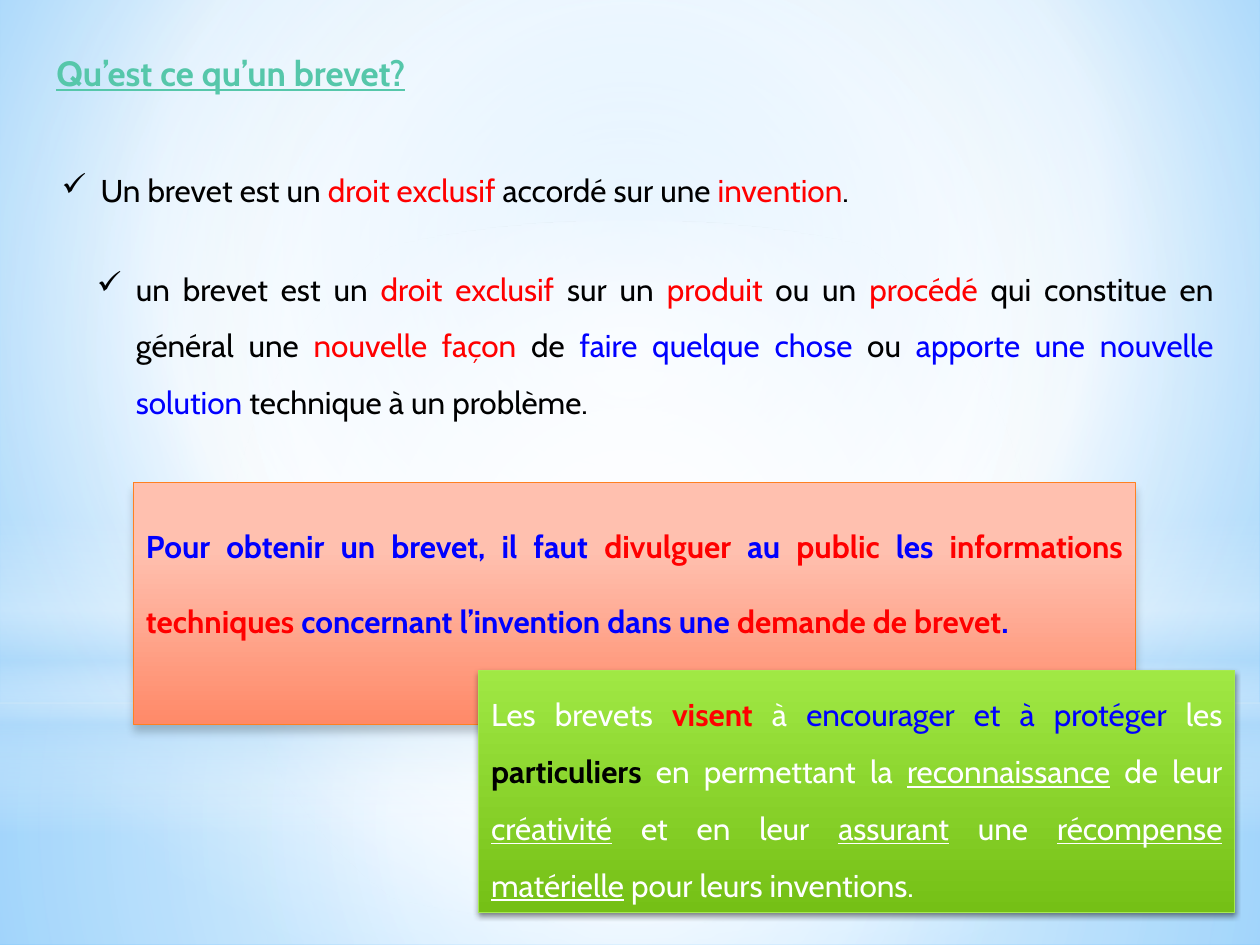
from lxml.etree import SubElement
from pptx import Presentation
from pptx.dml.color import RGBColor
from pptx.enum.shapes import MSO_SHAPE as SHAPE
from pptx.enum.text import MSO_ANCHOR as ANCHOR, MSO_AUTO_SIZE as AUTO, PP_ALIGN as ALIGN
from pptx.oxml.ns import qn
from pptx.util import Inches, Pt

FONT = "Cabin"
BLACK, WHITE, RED, BLUE, TEAL = "000000", "FFFFFF", "FF0000", "0000FF", "56C7AA"
SKY = "B4DCFA"
CENTRE = (50, 50, 50, 50)

# Content: runs are (text, colour, style), style holding b for bold, u for underline
TITLE = [("Qu’est ce qu’un brevet?", TEAL, "bu")]
RIGHT = [
    ("Un brevet est un ", BLACK, ""), ("droit exclusif ", RED, ""),
    ("accordé sur une ", BLACK, ""), ("invention", RED, ""), (".", BLACK, ""),
]
DEFINITION = [
    ("un brevet est un ", BLACK, ""), ("droit exclusif ", RED, ""),
    ("sur un ", BLACK, ""), ("produit", RED, ""), (" ou un ", BLACK, ""),
    ("procédé", RED, ""), (" qui constitue en général une ", BLACK, ""),
    ("nouvelle façon ", RED, ""), ("de ", BLACK, ""),
    ("faire quelque chose", BLUE, ""), (" ou ", BLACK, ""),
    ("apporte une nouvelle solution ", BLUE, ""),
    ("technique à un problème.", BLACK, ""),
]
CONDITION = [
    ("Pour obtenir un brevet, il faut ", BLUE, "b"), ("divulguer", RED, "b"),
    (" au ", BLUE, "b"), ("public", RED, "b"), (" les ", BLUE, "b"),
    ("informations techniques", RED, "b"),
    (" concernant l’invention dans une ", BLUE, "b"),
    ("demande de brevet", RED, "b"), (".", BLUE, "b"),
]
PURPOSE = [
    ("Les brevets ", WHITE, ""), ("visent", RED, "b"), (" à ", WHITE, ""),
    ("encourager et à protéger ", BLUE, ""), ("les ", WHITE, ""),
    ("particuliers ", BLACK, "b"), ("en permettant la ", WHITE, ""),
    ("reconnaissance", WHITE, "u"), (" de leur ", WHITE, ""),
    ("créativité", WHITE, "u"), (" et en leur ", WHITE, ""),
    ("assurant", WHITE, "u"), (" une ", WHITE, ""),
    ("récompense", WHITE, "u"), (" ", WHITE, ""),
    ("matérielle", WHITE, "u"), (" pour leurs inventions.", WHITE, ""),
]

# Backdrop layers: shape, place, stops (position, colour, opacity), gradient direction
LAYERS = [
    (SHAPE.RECTANGLE, (0, 5.58, 10, 1.92),
     [(0, WHITE, 91), (37, WHITE, 76), (100, SKY, 79)], {"focus": CENTRE}),
    (SHAPE.RECTANGLE, (0, 0, 10, 5.58),
     [(0, WHITE, 89), (48, WHITE, 62), (100, SKY, 79)], {"focus": CENTRE}),
    (SHAPE.RECTANGLE, (0, 4.12, 10, 2.5),
     [(0, WHITE, 0), (29, WHITE, 30), (45, SKY, 40), (55, WHITE, 26),
      (65, SKY, 60), (100, WHITE, 0)], {"angle": 90}),
    (SHAPE.OVAL, (0, 1.75, 10, 5.58),
     [(0, WHITE, 100), (56, WHITE, 0)], {"focus": CENTRE}),
]

# Text boxes: place, runs, format
TEXTS = [
    ((0.35, 0.36, 3.37, 0.44), TITLE, {"size": 20}),
    ((0.39, 1.31, 8.5, 0.4), RIGHT, {"bullet": "✓"}),
    ((0.67, 1.94, 9.06, 1.46), DEFINITION,
     {"bullet": "✓", "align": ALIGN.JUSTIFY, "spacing": 1.5}),
]

# Panels: place, stops, line colour, shadow (opacity, blur, distance), runs, spacing
PANELS = [
    ((1.06, 3.83, 7.95, 1.92), [(28, "FFC0AF", 100), (100, "FF8968", 100)],
     "FF8021", (20, 5, 4), CONDITION, 2.0),
    ((3.8, 5.32, 6, 1.92), [(0, "A0E844", 100), (100, "75C016", 100)],
     "A7EA52", (45, 3.1, 1.8), PURPOSE, 1.5),
]


def colour(text):
    return RGBColor.from_string(text)


def add_colour(parent, value, opacity):
    item = SubElement(parent, qn("a:srgbClr"), val=value)
    if opacity < 100:
        SubElement(item, qn("a:alpha"), val=str(opacity * 1000))


def set_gradient(fill, holder, stops, angle=90, focus=None):
    """Turn the fill kept in holder into a linear or, with a focus, a circular gradient."""
    fill.solid()
    solid = holder.find(qn("a:solidFill"))
    gradient = SubElement(holder, qn("a:gradFill"), rotWithShape="1")
    holder.replace(solid, gradient)
    stop_list = SubElement(gradient, qn("a:gsLst"))
    for position, value, opacity in stops:
        stop = SubElement(stop_list, qn("a:gs"), pos=str(position * 1000))
        add_colour(stop, value, opacity)
    if focus:
        circle = SubElement(gradient, qn("a:path"), path="circle")
        sides = {side: str(part * 1000) for side, part in zip("ltrb", focus)}
        SubElement(circle, qn("a:fillToRect"), **sides)
    else:
        SubElement(gradient, qn("a:lin"), ang=str(angle * 60000), scaled="0")


def add_panel(page, kind, place, stops, **direction):
    panel = page.shapes.add_shape(kind, *map(Inches, place))
    panel.shadow.inherit = False
    panel.line.fill.background()
    set_gradient(panel.fill, panel.element.spPr, stops, **direction)
    return panel


def add_shadow(shape, opacity, blur, distance):
    effects = shape.element.spPr.find(qn("a:effectLst"))
    shadow = SubElement(effects, qn("a:outerShdw"), blurRad=str(Pt(blur)),
                        dist=str(Pt(distance)), dir="5400000", rotWithShape="0")
    add_colour(shadow, BLACK, opacity)


def write(box, runs, size=18, align=ALIGN.LEFT, spacing=None, bullet=None):
    frame = box.text_frame
    frame.word_wrap = True
    frame.auto_size = AUTO.NONE
    frame.vertical_anchor = ANCHOR.TOP
    para = frame.paragraphs[0]
    para.alignment = align
    if spacing:
        para.line_spacing = spacing
    if bullet:
        settings = para._p.get_or_add_pPr()
        settings.set("marL", str(Inches(0.31)))
        settings.set("indent", str(Inches(-0.31)))
        SubElement(settings, qn("a:buChar"), char=bullet)
    for text, value, style in runs:
        span = para.add_run()
        span.text = text
        span.font.name = FONT
        span.font.size = Pt(size)
        span.font.color.rgb = colour(value)
        span.font.bold = "b" in style
        span.font.underline = "u" in style


def main():
    deck = Presentation()
    deck.slide_width, deck.slide_height = Inches(10), Inches(7.5)
    page = deck.slides.add_slide(deck.slide_layouts[6])

    # Background and its soft light layers
    fill = page.background.fill
    fill.solid()
    set_gradient(fill, page.element.find(".//" + qn("p:bgPr")),
                 [(0, "9ED5FF", 100), (60, WHITE, 100), (100, "5BB9FF", 100)],
                 focus=(20, 10, 20, 60))
    for kind, place, stops, direction in LAYERS:
        add_panel(page, kind, place, stops, **direction)

    # Title and bullets
    for place, runs, look in TEXTS:
        write(page.shapes.add_textbox(*map(Inches, place)), runs, **look)

    # Overlapping panels
    for place, stops, edge, shadow, runs, spacing in PANELS:
        panel = add_panel(page, SHAPE.RECTANGLE, place, stops)
        panel.line.color.rgb = colour(edge)
        panel.line.width = Pt(0.75)
        add_shadow(panel, *shadow)
        write(panel, runs, align=ALIGN.JUSTIFY, spacing=spacing)

    deck.save("out.pptx")


if __name__ == "__main__":
    main()
